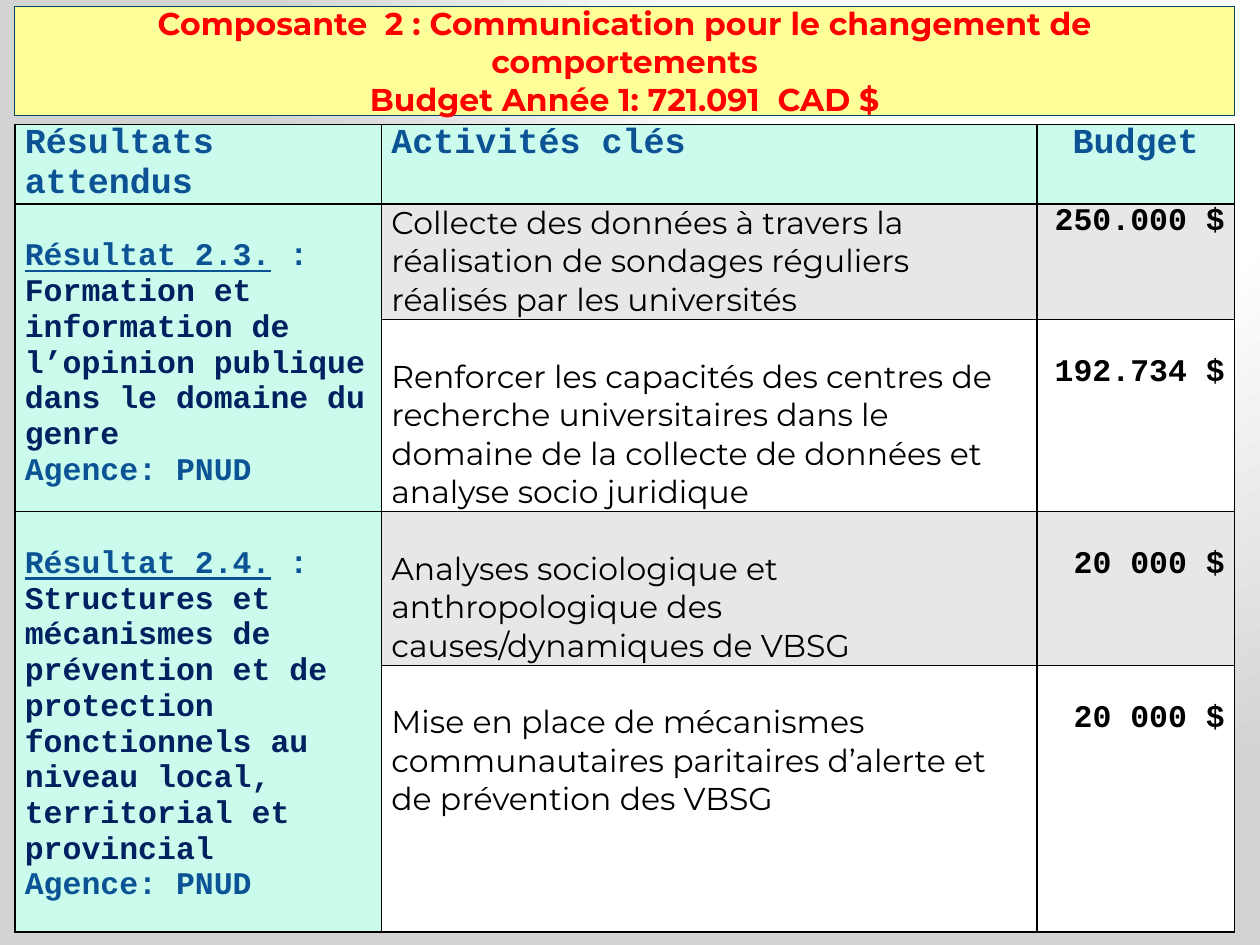
import pptx
import pptx.dml.color
import pptx.enum.shapes
import pptx.enum.text
import pptx.oxml
import pptx.util
from pptx.util import Cm

RGB = pptx.dml.color.RGBColor
ALIGN = pptx.enum.text.PP_ALIGN
RED = RGB(0xFF, 0, 0)
YELLOW = RGB(0xFF, 0xFF, 0x99)
TEAL = RGB(0x03, 0x49, 0x5C)
BLUE = RGB(0x0B, 0x53, 0x94)
NAVY = RGB(0, 0x20, 0x60)
MINT = RGB(0xCA, 0xFB, 0xED)
GREY = RGB(0xE7, 0xE7, 0xE7)
WHITE = RGB(0xFF, 0xFF, 0xFF)
BLACK = RGB(0, 0, 0)
SANS, MONO = "Montserrat", "Courier New"
NS = 'xmlns:a="http://schemas.openxmlformats.org/drawingml/2006/main"'

TITLE = ("Composante  2 : Communication pour le changement de comportements\v"
         "Budget Année 1: 721.091  CAD $")
HEADERS = [("Résultats attendus", ALIGN.LEFT), ("Activités clés", ALIGN.LEFT),
           ("Budget", ALIGN.CENTER)]
RESULTS = [
    ("Résultat 2.3.", "Formation et information de l’opinion publique dans le domaine du genre",
     "Agence: PNUD"),
    ("Résultat 2.4.", "Structures et mécanismes de prévention et de protection fonctionnels "
     "au niveau local, territorial et provincial", "Agence: PNUD"),
]
ACTIVITIES = [
    ("Collecte des données à travers la réalisation de sondages réguliers réalisés "
     "par les universités", "250.000 $"),
    ("Renforcer les capacités des centres de recherche universitaires dans le domaine "
     "de la collecte de données et analyse socio juridique", "192.734 $"),
    ("Analyses sociologique et anthropologique des causes/dynamiques de VBSG", "20 000 $"),
    ("Mise en place de mécanismes communautaires paritaires d’alerte et de prévention "
     "des VBSG", "20 000 $"),
]
COLUMNS = [7.39, 13.21, 3.99]
ROWS = [1.6, 2.33, 3.87, 3.1, 5.38]
LEFT, WIDTH = 0.3, sum(COLUMNS)
MONO_LINE, SANS_LINE = 0.72, 0.77


def style(font, name, size, color, bold=True):
    font.name, font.size, font.bold = name, pptx.util.Pt(size), bold
    font.color.rgb = color


def format_cell(cell, fill, top=0):
    cell.margin_left = cell.margin_right = Cm(0.2)
    cell.margin_top, cell.margin_bottom = Cm(top), 0
    cell.fill.solid()
    cell.fill.fore_color.rgb = fill
    tcPr = cell._tc.get_or_add_tcPr()
    for i, side in enumerate("LRTB"):
        tcPr.insert(i, pptx.oxml.parse_xml(
            f'<a:ln{side} {NS} w="12700"><a:solidFill><a:srgbClr val="{BLACK}"/>'
            f'</a:solidFill></a:ln{side}>'))


def write_cell(cell, text, align, *font):
    p = cell.text_frame.paragraphs[0]
    p.text, p.alignment = text, align
    style(p.font, *font)


def set_background(s):
    s.background.fill.solid()
    bgPr = s.background._cSld.bg.bgPr
    stops = "".join(f'<a:gs pos="{pos}"><a:srgbClr val="{color}"/></a:gs>' for pos, color in
                    [(0, "FFFFFF"), (40000, "FFFFFF"), (100000, "D3D3D3")])
    bgPr.replace(bgPr[0], pptx.oxml.parse_xml(
        f'<a:gradFill {NS} rotWithShape="1"><a:gsLst>{stops}</a:gsLst><a:path path="circle">'
        '<a:fillToRect l="65000" b="98000"/></a:path></a:gradFill>'))


def add_title(s):
    sp = s.shapes.add_shape(pptx.enum.shapes.MSO_SHAPE.RECTANGLE,
                            Cm(LEFT), Cm(0.13), Cm(WIDTH), Cm(2.2))
    sp.shadow.inherit = False
    sp.fill.solid()
    sp.fill.fore_color.rgb = YELLOW
    sp.line.color.rgb = TEAL
    sp.line.width = pptx.util.Pt(0.75)
    tf = sp.text_frame
    tf.word_wrap = True
    tf.vertical_anchor = pptx.enum.text.MSO_ANCHOR.MIDDLE
    p = tf.paragraphs[0]
    p.text, p.alignment = TITLE, ALIGN.CENTER
    for r in p.runs:
        style(r.font, SANS, 18, RED)


def add_budget_table(s):
    table = s.shapes.add_table(len(ROWS), len(COLUMNS), Cm(LEFT), Cm(2.51),
                               Cm(WIDTH), Cm(sum(ROWS))).table
    table.first_row = table.horz_banding = False
    for column, width in zip(table.columns, COLUMNS):
        column.width = Cm(width)
    for row, height in zip(table.rows, ROWS):
        row.height = Cm(height)

    for i, (text, align) in enumerate(HEADERS):
        format_cell(table.cell(0, i), MINT)
        write_cell(table.cell(0, i), text, align, MONO, 20, BLUE)

    for i, (activity, budget) in enumerate(ACTIVITIES, 1):
        fill = GREY if i % 2 else WHITE
        gap = i > 1
        format_cell(table.cell(i, 0), MINT, MONO_LINE)
        format_cell(table.cell(i, 1), fill, gap * SANS_LINE)
        format_cell(table.cell(i, 2), fill, gap * MONO_LINE)
        write_cell(table.cell(i, 1), activity, ALIGN.LEFT, SANS, 18, BLACK, False)
        write_cell(table.cell(i, 2), budget, ALIGN.RIGHT, MONO, 18, BLACK)

    for i, (label, result, agency) in enumerate(RESULTS):
        cell = table.cell(2 * i + 1, 0)
        cell.merge(table.cell(2 * i + 2, 0))
        tf = cell.text_frame
        p = tf.paragraphs[0]
        for text, color in [(label, BLUE), (" : ", BLUE), (result, NAVY)]:
            r = p.add_run()
            r.text = text
            style(r.font, MONO, 18, color)
        p.runs[0].font.underline = True
        p = tf.add_paragraph()
        p.text = agency
        style(p.font, MONO, 18, BLUE)


def main():
    prs = pptx.Presentation()
    prs.slide_width, prs.slide_height = Cm(25.4), Cm(19.05)
    s = prs.slides.add_slide(prs.slide_layouts[6])
    set_background(s)
    add_title(s)
    add_budget_table(s)
    prs.save("out.pptx")


if __name__ == "__main__":
    main()
